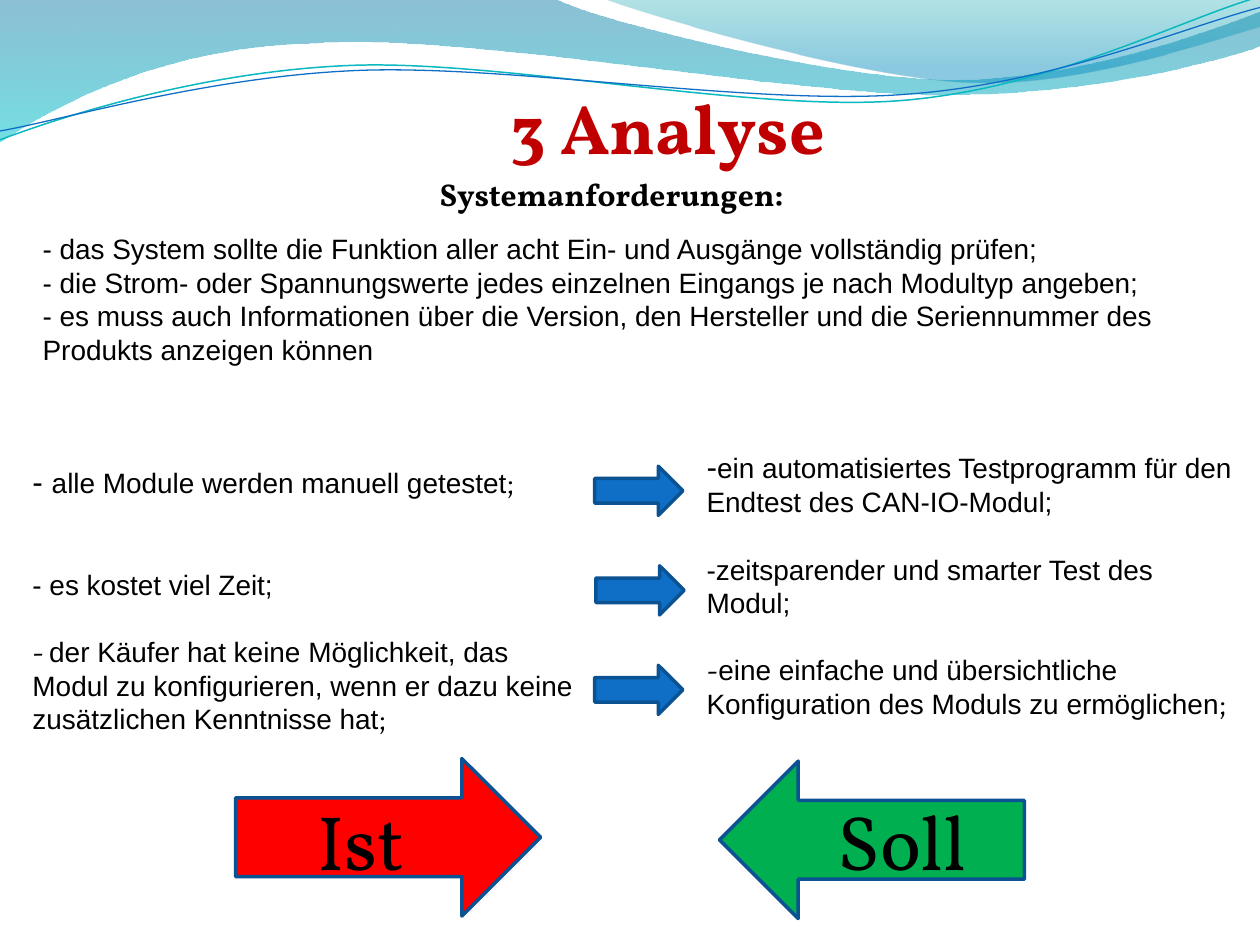
from math import cos, radians, sin

from pptx import Presentation
from pptx.util import Inches, Pt
from pptx.dml.color import RGBColor
from pptx.enum.shapes import MSO_SHAPE
from pptx.enum.text import PP_ALIGN, MSO_ANCHOR
from pptx.oxml.ns import qn
from lxml.etree import SubElement

THEME = {
    "sans": "Arial", "serif": "Vollkorn",
    "ink": "000000", "title": "C00000", "edge": "0B5292",
    "ist": "FF0000", "soll": "00B050", "step": "0F6FC6",
    "huge": 44, "head": 40, "sub": 18, "body": 16,
}
SANS, SERIF = "sans", "serif"
LINE = 19.2  # height of one body line in points
TILT = 2.7  # degrees the strands lean to the left

# Text: box, paragraphs; a paragraph is (blank lines before, runs)
# A run is (text, font, size)
GOALS = [
    "- das System sollte die Funktion aller acht Ein- und Ausgänge vollständig prüfen;",
    "- die Strom- oder Spannungswerte jedes einzelnen Eingangs je nach Modultyp angeben;",
    "- es muss auch Informationen über die Version, den Hersteller und die "
    "Seriennummer des Produkts anzeigen können",
]
BODY = [
    ((0.24, 1.79, 9.45, 1.42), [(0, [(goal, SANS, "body")]) for goal in GOALS]),
    ((0.16, 3.62, 4.57, 2.34), [
        (0, [("- ", SANS, "sub"),
             ("alle Module werden manuell getestet", SANS, "body"),
             (";", SERIF, "body")]),
        (2, [("- es kostet viel Zeit;", SANS, "body")]),
        (1, [("- ", SERIF, "body"),
             ("der Käufer hat keine Möglichkeit, das Modul zu konfigurieren, "
              "wenn er dazu keine zusätzlichen Kenntnisse hat", SANS, "body"),
             (";", SERIF, "body")]),
    ]),
    ((5.51, 3.5, 4.41, 2.33), [
        (0, [("-", SANS, "sub"),
             ("ein automatisiertes Testprogramm für den Endtest des CAN-IO-Modul;",
              SANS, "body")]),
        (1, [("-zeitsparender und smarter Test des Modul;", SANS, "body")]),
        (1, [("-", SERIF, "body"),
             ("eine einfache und übersichtliche Konfiguration des Moduls zu ermöglichen",
              SANS, "body"),
             (";", SERIF, "body")]),
    ]),
]
# Labels: box, text, size, colour, bold, centred
LABELS = [
    ((3.68, 0.62, 3.24, 0.77), "3 Analyse", "head", "title", True, True),
    ((3.39, 1.34, 3.76, 0.4), "Systemanforderungen:", "sub", "ink", True, False),
    ((2.42, 6.25, 1.02, 0.83), "Ist", "huge", "ink", False, False),
    ((6.55, 6.25, 1.33, 0.83), "Soll", "huge", "ink", False, False),
]
# Arrows: box, colour, turn
ARROWS = [
    ((1.87, 6.02, 2.42, 1.25), "ist", 0),
    ((5.71, 6.04, 2.42, 1.25), "soll", 180),
] + [((left, 3.7 + 0.79 * row, 0.7, 0.39), "step", 0)
     for row, left in enumerate((4.72, 4.73, 4.72))]

# Waves: a pair is a corner, three pairs are a curve
BANDS = [
    ([[(0, 0)], [(4.4, -0.01)],
      [(4.76, 0.17), (6.64, 0.63), (7.58, 0.63)],
      [(8.53, 0.63), (9.58, 0.26), (10, 0.09)], [(10.01, 0.36)],
      [(9.83, 0.44), (8.7, 0.76), (7.46, 0.75)],
      [(6.22, 0.75), (3.82, 0.28), (2.57, 0.34)],
      [(1.29, 0.36), (0.46, 0.83), (-0.01, 1.13)]],
     [(0, "0074A1", 45), (1, "00C6CF", 55)]),
    ([[(4.79, -0.01)], [(5.09, 0.11), (6.82, 0.62), (7.69, 0.65)],
      [(8.56, 0.69), (9.61, 0.32), (10, 0.21)], [(10, 0)]],
     [(0, "00A1A9", 30), (0.8, "008BBF", 45)]),
]
STRANDS = [
    ([[(0, 1.11)], [(0.48, 0.93), (1.58, 0.57), (2.77, 0.52)],
      [(3.95, 0.47), (5.93, 0.89), (7.13, 0.8)],
      [(8.33, 0.71), (9.38, 0.15), (9.98, -0.02)]], "0AB8BF", 0.85),
    ([[(0, 1.04)], [(0.47, 0.96), (1.64, 0.61), (2.83, 0.56)],
      [(4.03, 0.51), (5.97, 0.84), (7.17, 0.75)],
      [(8.36, 0.67), (9.41, 0.21), (10, 0.06)]], "0F6FC6", 0.75),
]


def paint(name):
    return RGBColor.from_string(THEME.get(name, name))


def spin(dot, angle):
    """Turn a point clockwise about the slide corner."""
    (x, y), a = dot, radians(angle)
    return x * cos(a) - y * sin(a), x * sin(a) + y * cos(a)


def draw(slide, steps, close):
    """Build the outline from its end points, then bend the curved parts."""
    steps = [[(Inches(x), Inches(y)) for x, y in step] for step in steps]
    pen = slide.shapes.build_freeform(*steps[0][0], scale=1.0)
    pen.add_line_segments([step[-1] for step in steps[1:]], close=close)
    shape = pen.convert_to_shape()
    shape.shadow.inherit = False
    sides = list(shape._element.iter(qn("a:lnTo")))
    for side, step in zip(sides, steps[1:]):
        if len(step) == 3:
            side.tag = qn("a:cubicBezTo")
            for i, (x, y) in enumerate(step[:2]):
                knob = SubElement(side, qn("a:pt"))
                knob.set("x", str(x - shape.left))
                knob.set("y", str(y - shape.top))
                side.insert(i, knob)
    return shape


def add_band(slide, steps, stops):
    shape = draw(slide, steps, True)
    shape.line.fill.background()
    shape.fill.gradient()
    shape.fill.gradient_angle = 270
    for stop, (place, color, _) in zip(shape.fill.gradient_stops, stops):
        stop.position = place
        stop.color.rgb = paint(color)
    tints = shape._element.spPr.iter(qn("a:srgbClr"))
    for tint, (_, _, alpha) in zip(list(tints), stops):
        SubElement(tint, qn("a:alpha")).set("val", str(alpha * 1000))


def add_strand(slide, steps, color, width):
    level = [[spin(dot, TILT) for dot in step] for step in steps]
    shape = draw(slide, level, False)
    half, rise = shape.width / 2, shape.height / 2
    x, y = spin((shape.left + half, shape.top + rise), -TILT)
    shape.left, shape.top = round(x - half), round(y - rise)
    shape.rotation = 360 - TILT
    shape.fill.background()
    shape.line.color.rgb = paint(color)
    shape.line.width = Pt(width)


def add_arrow(slide, box, color, turn):
    shape = slide.shapes.add_shape(MSO_SHAPE.RIGHT_ARROW, *map(Inches, box))
    shape.shadow.inherit = False
    shape.rotation = turn
    shape.fill.solid()
    shape.fill.fore_color.rgb = paint(color)
    shape.line.color.rgb = paint("edge")
    shape.line.width = Pt(2)


def add_text(slide, box, paras, color="ink", bold=False, mid=False):
    frame = slide.shapes.add_textbox(*map(Inches, box)).text_frame
    frame.word_wrap = not mid
    frame.vertical_anchor = MSO_ANCHOR.TOP
    for i, (gap, runs) in enumerate(paras):
        para = frame.add_paragraph() if i else frame.paragraphs[0]
        para.alignment = PP_ALIGN.CENTER if mid else PP_ALIGN.LEFT
        para.space_before = Pt(gap * LINE)
        for words, face, size in runs:
            run = para.add_run()
            run.text = words
            run.font.name = THEME[face]
            run.font.size = Pt(THEME[size])
            run.font.bold = bold
            run.font.color.rgb = paint(color)


def main():
    deck = Presentation()
    deck.slide_width, deck.slide_height = Inches(10), Inches(7.5)
    slide = deck.slides.add_slide(deck.slide_layouts[6])

    # Waves along the top
    for band in BANDS:
        add_band(slide, *band)
    for strand in STRANDS:
        add_strand(slide, *strand)

    # Arrows below the words
    for arrow in ARROWS:
        add_arrow(slide, *arrow)

    # Lists, then title and labels
    for box, paras in BODY:
        add_text(slide, box, paras)
    for box, words, size, color, bold, mid in LABELS:
        add_text(slide, box, [(0, [(words, SERIF, size)])], color, bold, mid)

    deck.save("out.pptx")


if __name__ == "__main__":
    main()
